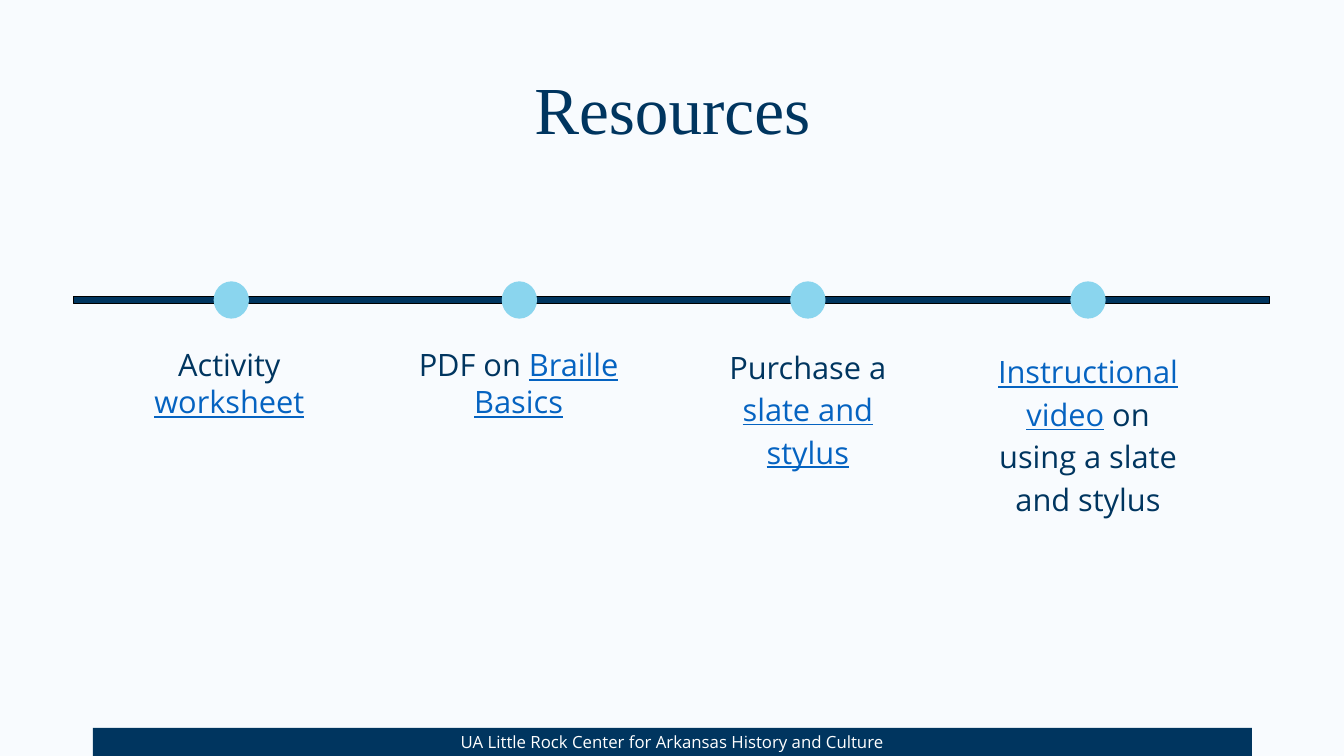
from dataclasses import dataclass

from pptx import Presentation
from pptx.dml.color import RGBColor
from pptx.enum.shapes import MSO_SHAPE
from pptx.enum.text import MSO_ANCHOR, PP_ALIGN
from pptx.util import Cm, Pt


@dataclass(frozen=True)
class Theme:
    """Colours, fonts and type sizes of the deck."""
    background: str = "F8FBFE"
    navy: str = "00355F"
    sky: str = "8AD5EE"
    link: str = "0563C1"
    white: str = "FFFFFF"
    black: str = "000000"
    heading_font: str = "Times New Roman"
    body_font: str = "Open Sans"
    title_size: int = 48
    label_size: int = 22
    footer_size: int = 12


@dataclass(frozen=True)
class Box:
    """A rectangle in centimetres."""
    left: float
    top: float
    width: float
    height: float

    def lengths(self):
        """Return the four sides as slide lengths."""
        return [Cm(side) for side in (self.left, self.top, self.width, self.height)]


@dataclass(frozen=True)
class Resource:
    """One stop on the timeline: dot centre, label box, spans and spacing."""
    centre: float
    label: Box
    spans: tuple
    line_spacing: float = 1.0
    space_after: int = 0
    inset: float = 0.13


THEME = Theme()
TITLE = Box(2.34, 0.99, 29.21, 3.68)
TIMELINE = Box(1.85, 7.47, 30.15, 0.18)
FOOTER = Box(2.34, 18.34, 29.21, 0.71)
DOT_WIDTH, DOT_HEIGHT = 0.89, 0.94
LABEL_WIDTH = 5.56

RESOURCES = (
    Resource(5.83, Box(3.0, 8.59, LABEL_WIDTH, 2.13),
             (("Activity ", False), ("worksheet", True))),
    Resource(13.09, Box(10.29, 8.59, LABEL_WIDTH, 2.13),
             (("PDF on ", False), ("Braille Basics", True))),
    Resource(20.36, Box(17.58, 8.51, LABEL_WIDTH, 3.35),
             (("Purchase a ", False), ("slate and stylus", True)), 1.15, 12),
    Resource(27.42, Box(24.64, 8.51, LABEL_WIDTH, 4.7),
             (("Instructional video", True), (" on using a slate and stylus", False)),
             1.15, 12, 0.25),
)


def add_span(para, text, *, font, size, color, underline=False):
    """Append formatted text to a paragraph."""
    span = para.add_run()
    span.text = text
    span.font.name = font
    span.font.size = Pt(size)
    span.font.color.rgb = RGBColor.from_string(color)
    span.font.underline = underline


def prepare_frame(shape, anchor=MSO_ANCHOR.TOP, inset=0.13):
    """Set up a wrapping text frame and return its centred paragraph."""
    frame = shape.text_frame
    frame.word_wrap = True
    frame.vertical_anchor = anchor
    frame.margin_left = frame.margin_right = Cm(0.25)
    frame.margin_top = frame.margin_bottom = Cm(inset)
    para = frame.paragraphs[0]
    para.alignment = PP_ALIGN.CENTER
    return para


def add_filled_shape(page, kind, box, fill, outline=None):
    """Draw a flat preset shape, with a thin outline if one is named."""
    shape = page.shapes.add_shape(kind, *box.lengths())
    shape.shadow.inherit = False
    shape.fill.solid()
    shape.fill.fore_color.rgb = RGBColor.from_string(fill)
    if outline:
        shape.line.color.rgb = RGBColor.from_string(outline)
        shape.line.width = Pt(0.75)
    else:
        shape.line.fill.background()
    return shape


def add_title(page, box, text):
    """Place the slide heading."""
    para = prepare_frame(page.shapes.add_textbox(*box.lengths()), MSO_ANCHOR.MIDDLE)
    para.line_spacing = 0.9
    add_span(para, text, font=THEME.heading_font, size=THEME.title_size, color=THEME.navy)


def add_label(page, resource):
    """Place the text below one timeline stop."""
    shape = page.shapes.add_textbox(*resource.label.lengths())
    para = prepare_frame(shape, inset=resource.inset)
    para.line_spacing = resource.line_spacing
    para.space_after = Pt(resource.space_after)
    for text, linked in resource.spans:
        add_span(para, text, font=THEME.body_font, size=THEME.label_size,
                 color=THEME.link if linked else THEME.navy, underline=linked)


def add_timeline(page, box, resources):
    """Draw the bar with a dot and a label for each resource."""
    add_filled_shape(page, MSO_SHAPE.RECTANGLE, box, THEME.navy, THEME.black)
    dot_top = box.top + (box.height - DOT_HEIGHT) / 2
    for resource in resources:
        dot = Box(resource.centre - DOT_WIDTH / 2, dot_top, DOT_WIDTH, DOT_HEIGHT)
        add_filled_shape(page, MSO_SHAPE.OVAL, dot, THEME.sky)
        add_label(page, resource)


def add_footer(page, box, text):
    """Draw the footer band with its text."""
    band = add_filled_shape(page, MSO_SHAPE.RECTANGLE, box, THEME.navy)
    para = prepare_frame(band, MSO_ANCHOR.MIDDLE)
    add_span(para, text, font=THEME.body_font, size=THEME.footer_size, color=THEME.white)


def main():
    """Build and save the deck."""
    deck = Presentation()
    deck.slide_width, deck.slide_height = Cm(33.87), Cm(19.05)
    page = deck.slides.add_slide(deck.slide_layouts[6])
    page.background.fill.solid()
    page.background.fill.fore_color.rgb = RGBColor.from_string(THEME.background)
    add_title(page, TITLE, "Resources")
    add_timeline(page, TIMELINE, RESOURCES)
    add_footer(page, FOOTER, "UA Little Rock Center for Arkansas History and Culture")
    deck.save("out.pptx")


if __name__ == "__main__":
    main()
